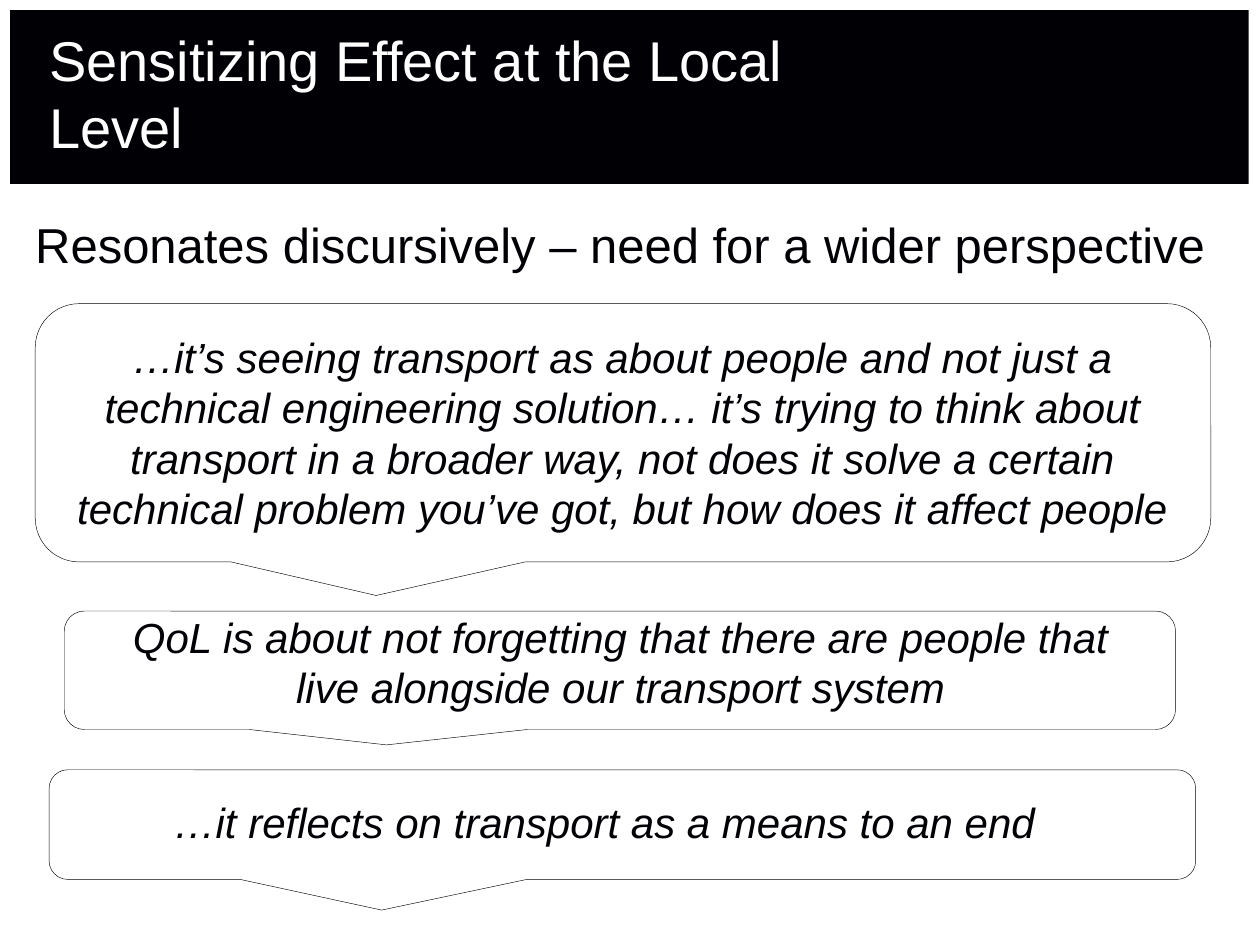
from dataclasses import dataclass

from pptx import Presentation
from pptx.dml.color import RGBColor
from pptx.enum.shapes import MSO_SHAPE as Shape
from pptx.enum.text import MSO_ANCHOR as Anchor, MSO_AUTO_SIZE as AutoSize, PP_ALIGN as Align
from pptx.util import Inches, Pt


@dataclass(frozen=True)
class Theme:
    font: str = "Arial"
    ink: RGBColor = RGBColor(0x00, 0x00, 0x05)
    paper: RGBColor = RGBColor(0xFF, 0xFF, 0xFF)
    title: Pt = Pt(32)
    lead: Pt = Pt(28)
    quote: Pt = Pt(24)
    outline: Pt = Pt(0.25)


THEME = Theme()

# Each quote: callout box, callout adjustments, text box, alignment, text
QUOTES = [
    ((0.39, 6.11, 9.1, 0.87), (-0.21, 0.78, 0.17), (1.28, 6.27, 7.32, 0.5), Align.LEFT,
     "…it reflects on transport as a means to an end"),
    ((0.51, 4.85, 8.82, 0.94), (-0.21, 0.63, 0.17), (0.75, 4.8, 8.35, 0.91), Align.CENTER,
     "QoL is about not forgetting that there are people that live alongside "
     "our transport system"),
    ((0.28, 2.41, 9.33, 2.05), (-0.21, 0.63, 0.17), (0.39, 2.58, 9.1, 1.72), Align.CENTER,
     "…it’s seeing transport as about people and not just a technical engineering "
     "solution… it’s trying to think about transport in a broader way, not does it "
     "solve a certain technical problem you’ve got, but how does it affect people"),
]


def set_attrs(target, values):
    for name, value in values.items():
        setattr(target, name, value)


def inches(box):
    return [Inches(v) for v in box]


def write(sp, text, size, color=THEME.ink, align=Align.LEFT, italic=False, frame=None):
    """Fill a shape with one formatted paragraph; frame holds text frame settings."""
    tf = sp.text_frame
    set_attrs(tf, {"word_wrap": True, "auto_size": AutoSize.NONE, **(frame or {})})
    p = tf.paragraphs[0]
    p.alignment = align
    r = p.add_run()
    r.text = text
    set_attrs(r.font, {"name": THEME.font, "size": size, "italic": italic})
    r.font.color.rgb = color


def no_margins(anchor):
    sides = ("left", "top", "right", "bottom")
    return {"vertical_anchor": anchor, **{f"margin_{side}": 0 for side in sides}}


def add_title(s, box, text):
    title = s.shapes.title
    set_attrs(title, dict(zip(("left", "top", "width", "height"), inches(box))))
    write(title, text, THEME.title, THEME.paper, frame=no_margins(Anchor.BOTTOM))


def add_band(s, box):
    """Add the dark band behind the title."""
    band = s.shapes.add_shape(Shape.RECTANGLE, *inches(box))
    band.shadow.inherit = False
    band.fill.solid()
    band.fill.fore_color.rgb = THEME.ink
    band.line.fill.background()
    s.shapes.title.element.addprevious(band.element)


def add_callout(s, box, adjustments):
    sp = s.shapes.add_shape(Shape.ROUNDED_RECTANGULAR_CALLOUT, *inches(box))
    for i, value in enumerate(adjustments):
        sp.adjustments[i] = value
    sp.shadow.inherit = False
    sp.fill.background()
    sp.line.color.rgb = THEME.ink
    sp.line.width = THEME.outline


def add_text(s, box, text, size, **style):
    write(s.shapes.add_textbox(*inches(box)), text, size, **style)


def main():
    prs = Presentation()
    set_attrs(prs, {"slide_width": Inches(10), "slide_height": Inches(7.5)})
    s = prs.slides.add_slide(prs.slide_layouts.get_by_name("Title Only"))
    add_band(s, (0.08, 0.08, 9.83, 1.38))
    add_title(s, (0.39, 0.21, 6.58, 1.06), "Sensitizing Effect at the Local Level")
    add_text(s, (0.28, 1.7, 9.33, 0.6),
             "Resonates discursively – need for a wider perspective",
             THEME.lead, frame=no_margins(Anchor.TOP))
    for callout_box, adjustments, text_box, align, text in QUOTES:
        add_callout(s, callout_box, adjustments)
        add_text(s, text_box, text, THEME.quote, align=align, italic=True)
    prs.save("out.pptx")


if __name__ == "__main__":
    main()
